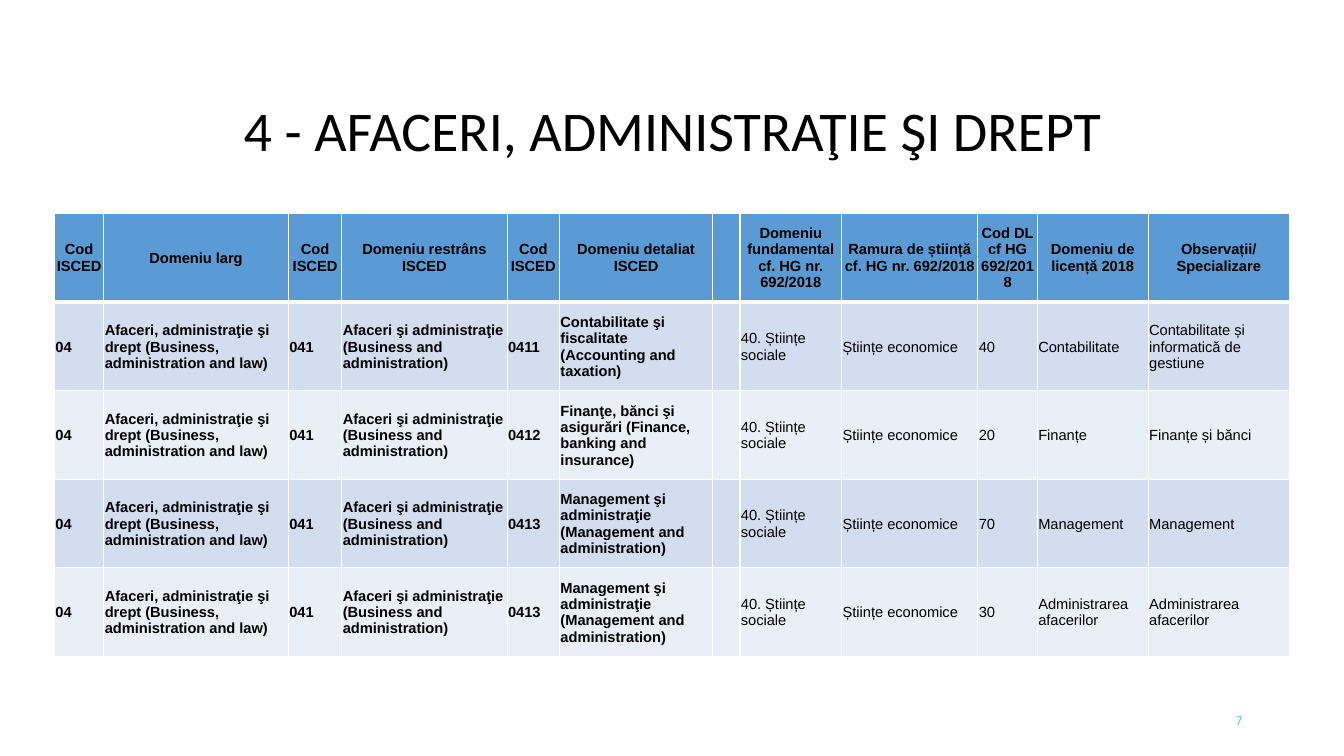
from lxml import etree
from pptx import Presentation
from pptx.dml.color import RGBColor
from pptx.enum.text import MSO_ANCHOR, PP_ALIGN
from pptx.oxml.ns import qn
from pptx.util import Inches, Pt

LEFT, CENTER, RIGHT = PP_ALIGN.LEFT, PP_ALIGN.CENTER, PP_ALIGN.RIGHT
MIDDLE = MSO_ANCHOR.MIDDLE
BLACK = RGBColor(0x00, 0x00, 0x00)
WHITE = RGBColor(0xFF, 0xFF, 0xFF)
BLUE = RGBColor(0x5B, 0x9B, 0xD5)
CYAN = RGBColor(0x5F, 0xCB, 0xEF)
BANDS = (RGBColor(0xD2, 0xDE, 0xEF), RGBColor(0xEA, 0xEF, 0xF7))

WIDTHS = (0.49, 1.83, 0.53, 1.64, 0.52, 1.52, 0.27, 1.01, 1.35, 0.59, 1.1, 1.4)
BOLD_COLS = 6
HEADER = (
    "Cod ISCED", "Domeniu larg", "Cod ISCED", "Domeniu restrâns ISCED",
    "Cod ISCED", "Domeniu detaliat ISCED", "",
    "Domeniu fundamental cf. HG nr. 692/2018", "Ramura de știință cf. HG nr. 692/2018",
    "Cod DL cf HG 692/2018", "Domeniu de licență 2018", "Observații/ Specializare",
)
BROAD = ("04", "Afaceri, administraţie şi drept (Business, administration and law)",
         "041", "Afaceri şi administraţie (Business and administration)")
BRANCH = ("", "40. Științe sociale", "Științe economice")
MANAGE = ("0413", "Management şi administraţie (Management and administration)")
FIELDS = (
    (("0411", "Contabilitate şi fiscalitate (Accounting and taxation)"),
     ("40", "Contabilitate", "Contabilitate și informatică de gestiune")),
    (("0412", "Finanţe, bănci şi asigurări (Finance, banking and insurance)"),
     ("20", "Finanțe", "Finanțe și bănci")),
    (MANAGE, ("70", "Management", "Management")),
    (MANAGE, ("30", "Administrarea afacerilor", "Administrarea afacerilor")),
)


def write(frame, text, size=10.5, font="Arial", color=BLACK, bold=False,
          align=LEFT, spacing=None):
    """Put formatted text in a text frame."""
    para = frame.paragraphs[0]
    para.text = text
    para.alignment = align
    para.line_spacing = spacing
    para.font.size = Pt(size)
    para.font.name = font
    para.font.bold = bold
    para.font.color.rgb = color


def add_label(slide, box, text, **style):
    """Add a vertically centred line of text in a box."""
    frame = slide.shapes.add_textbox(*map(Inches, box)).text_frame
    frame.word_wrap = True
    frame.vertical_anchor = MIDDLE
    write(frame, text, **style)


def add_edges(cell, top, bottom):
    """Draw white borders around a cell, with widths in points."""
    props = cell._tc.get_or_add_tcPr()
    for tag, width in (("lnL", 1), ("lnR", 1), ("lnT", top), ("lnB", bottom)):
        line = etree.SubElement(props, qn("a:" + tag), w=str(Pt(width)))
        fill = etree.SubElement(line, qn("a:solidFill"))
        etree.SubElement(fill, qn("a:srgbClr"), val=str(WHITE))


def fill_cell(cell, text, row, col):
    """Format one cell by its row and column."""
    head = row == 0
    add_edges(cell, 3 if row == 1 else 1, 3 if head else 1)
    cell.fill.solid()
    cell.fill.fore_color.rgb = BLUE if head else BANDS[(row - 1) % 2]
    cell.vertical_anchor = MIDDLE
    cell.margin_left = cell.margin_right = cell.margin_top = Inches(0 if head else 0.01)
    cell.margin_bottom = 0
    write(cell.text_frame, text, bold=head or col < BOLD_COLS,
          align=CENTER if head else LEFT)


def add_grid(slide, box):
    """Add the table of study fields in a box."""
    rows = [HEADER] + [BROAD + detail + BRANCH + degree for detail, degree in FIELDS]
    table = slide.shapes.add_table(len(rows), len(WIDTHS), *map(Inches, box)).table
    for col, width in zip(table.columns, WIDTHS):
        col.width = Inches(width)
    for r, texts in enumerate(rows):
        table.rows[r].height = Inches(box[3] / len(rows))
        for c, text in enumerate(texts):
            fill_cell(table.cell(r, c), text, r, c)


def main():
    """Build and save the slide."""
    deck = Presentation()
    deck.slide_width, deck.slide_height = Inches(13.33), Inches(7.5)
    slide = deck.slides.add_slide(deck.slide_layouts[6])
    add_grid(slide, (0.54, 2.12, 12.26, 4.39))
    add_label(slide, (9.42, 6.95, 3, 0.4), "7",
              size=9, font="Cabin", color=CYAN, align=RIGHT)
    add_label(slide, (0.92, 0.96, 11.5, 0.72), "4 - AFACERI, ADMINISTRAŢIE ŞI DREPT",
              size=40, font="Calibri", align=CENTER, spacing=0.9)
    deck.save("out.pptx")


if __name__ == "__main__":
    main()
